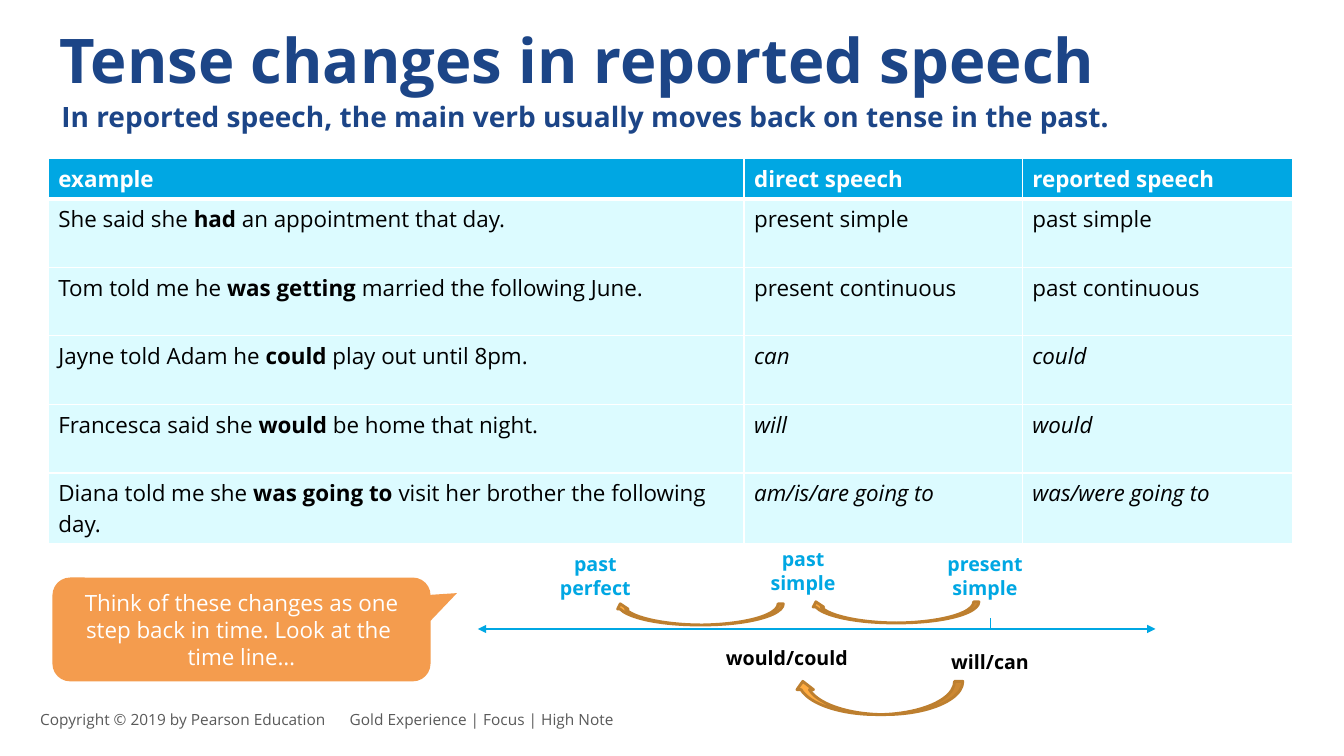
from lxml.etree import SubElement
from pptx import Presentation
from pptx.dml.color import RGBColor
from pptx.enum.shapes import MSO_CONNECTOR as Connector, MSO_SHAPE as Shape
from pptx.enum.text import MSO_ANCHOR as Anchor, MSO_AUTO_SIZE as AutoSize, PP_ALIGN as Align
from pptx.oxml.ns import qn
from pptx.util import Pt

PX = 9144
FONT = "Open Sans"
COLORS = {"navy": "1C4587", "blue": "00A7E3", "ice": "BAF8FF", "orange": "F49C4E",
          "amber": "FFAB40", "brown": "BD7F2F", "grey": "595959",
          "white": "FFFFFF", "black": "000000"}

TITLE = "Tense changes in reported speech"
SUBTITLE = "In reported speech, the main verb usually moves back on tense in the past."
HEADER = ["example", "direct speech", "reported speech"]
ROWS = [
    ("She said she **had** an appointment that day.", "present simple", "past simple"),
    ("Tom told me he **was getting** married the following June.",
     "present continuous", "past continuous"),
    ("Jayne told Adam he **could** play out until 8pm.", "can", "could"),
    ("Francesca said she **would** be home that night.", "will", "would"),
    ("Diana told me she **was going to** visit her brother the following day.",
     "am/is/are going to", "was/were going to"),
]
FIRST_ITALIC_ROW = 3
COLUMN_WIDTHS = [690, 276, 268]
HEADER_HEIGHT, ROW_HEIGHT = 38, 68
ADVICE = ["Think of these changes as one step back in time. Look at the ", "time line…"]
FOOTER = "Copyright © 2019 by Pearson Education\tGold Experience | Focus | High Note"
FOOTER_TAB = 307
TIMELINE_LABELS = [
    ("will/can", "black", (894, 640, 176, 34)),
    ("present simple", "blue", (928, 543, 98, 57)),
    ("past simple", "blue", (737, 538, 119, 57)),
    ("past perfect", "blue", (531, 543, 119, 57)),
    ("would/could", "black", (660, 636, 241, 34)),
]
TIMELINE = [((474, 624), (1146, 624), 1.75, True), ((982, 624), (982, 613), 0.75, False)]
STEP_ARROWS = [(788, 676, 167, 33), (804, 597, 167, 21), (610, 599, 167, 21)]


def emu(lengths):
    return [length * PX for length in lengths]


def rgb(name):
    return RGBColor.from_string(COLORS[name])


def apply(target, **values):
    for name, value in values.items():
        setattr(target, name, value)


def write(para, text, size, color, bold=False, italic=False, **layout):
    apply(para, **layout)
    for index, part in enumerate(text.split("**")):
        span = para.add_run()
        span.text = part
        apply(span.font, name=FONT, size=Pt(size), bold=bold or index % 2 == 1, italic=italic)
        span.font.color.rgb = rgb(color)


def place(shape, area):
    apply(shape, **dict(zip(("left", "top", "width", "height"), emu(area))))


def add_label(slide, area, text, size, color, bold=True, anchor=Anchor.TOP,
              fit=AutoSize.NONE, **layout):
    box = slide.shapes.add_textbox(*emu(area))
    apply(box.text_frame, word_wrap=True, vertical_anchor=anchor, auto_size=fit)
    write(box.text_frame.paragraphs[0], text, size, color, bold, **layout)
    return box


def add_filled(slide, kind, area, color):
    shape = slide.shapes.add_shape(kind, *emu(area))
    shape.shadow.inherit = False
    shape.fill.solid()
    shape.fill.fore_color.rgb = rgb(color)
    return shape


def style_cell(cell, color, bottom_width, alpha=None):
    props = cell._tc.get_or_add_tcPr()
    for side, width in (("lnL", 1), ("lnR", 1), ("lnT", 1), ("lnB", bottom_width)):
        border = SubElement(props, qn(f"a:{side}"), w=str(Pt(width)))
        SubElement(SubElement(border, qn("a:solidFill")), qn("a:srgbClr"), val=COLORS["white"])
    fill = SubElement(SubElement(props, qn("a:solidFill")), qn("a:srgbClr"), val=COLORS[color])
    if alpha:
        SubElement(fill, qn("a:alpha"), val=str(alpha * 1000))


def add_tense_table(slide):
    height = HEADER_HEIGHT + ROW_HEIGHT * len(ROWS)
    area = emu((48, 157, sum(COLUMN_WIDTHS), height))
    table = slide.shapes.add_table(len(ROWS) + 1, len(HEADER), *area).table
    for column, width in zip(table.columns, COLUMN_WIDTHS):
        column.width = width * PX
    for r, texts in enumerate([HEADER, *ROWS]):
        table.rows[r].height = (ROW_HEIGHT if r else HEADER_HEIGHT) * PX
        for c, text in enumerate(texts):
            cell = table.cell(r, c)
            para = cell.text_frame.paragraphs[0]
            if r:
                style_cell(cell, "ice", 1, 50)
                write(para, text, 16, "black", italic=c > 0 and r >= FIRST_ITALIC_ROW)
            else:
                style_cell(cell, "blue", 3)
                write(para, text, 16, "white", True)


def add_timeline(slide):
    for start, end, width, arrowed in TIMELINE:
        line = slide.shapes.add_connector(Connector.STRAIGHT, *emu(start + end))
        line.line.color.rgb = rgb("blue")
        line.line.width = Pt(width)
        if arrowed:
            outline = line.line._get_or_add_ln()
            for tip in ("headEnd", "tailEnd"):
                SubElement(outline, qn(f"a:{tip}"), type="triangle")
        SubElement(line._element.spPr, qn("a:effectLst"))
    for text, color, area in TIMELINE_LABELS:
        add_label(slide, area, text, 14, color, fit=AutoSize.SHAPE_TO_FIT_TEXT,
                  alignment=Align.CENTER)
    for area in STEP_ARROWS:
        arrow = add_filled(slide, Shape.CURVED_UP_ARROW, area, "amber")
        arrow.line.color.rgb = rgb("brown")
        arrow.line.width = Pt(2)
        arrow._element.spPr.xfrm.set("flipH", "1")


def add_advice(slide):
    callout = add_filled(slide, Shape.ROUNDED_RECTANGULAR_CALLOUT, (52, 573, 375, 103), "orange")
    callout.line.fill.background()
    for index, value in enumerate((0.57, -0.35, 0.17)):
        callout.adjustments[index] = value
    frame = callout.text_frame
    apply(frame, word_wrap=True, vertical_anchor=Anchor.MIDDLE)
    for index, text in enumerate(ADVICE):
        para = frame.add_paragraph() if index else frame.paragraphs[0]
        write(para, text, 16, "white", alignment=Align.CENTER)


def add_footer(slide):
    box = add_label(slide, (30, 694, 692, 40), FOOTER, 11, "grey", False, Anchor.MIDDLE)
    tabs = SubElement(box.text_frame.paragraphs[0]._p.get_or_add_pPr(), qn("a:tabLst"))
    SubElement(tabs, qn("a:tab"), pos=str(FOOTER_TAB * PX), algn="l")


def main():
    deck = Presentation()
    apply(deck, slide_width=1333 * PX, slide_height=750 * PX)
    page = deck.slides.add_slide(deck.slide_layouts[5])
    title = page.shapes.title
    place(title, (49, 25, 1203, 143))
    apply(title.text_frame, word_wrap=True, vertical_anchor=Anchor.TOP, auto_size=AutoSize.NONE)
    write(title.text_frame.paragraphs[0], TITLE, 44, "navy", True,
          alignment=Align.LEFT, line_spacing=0.9)
    add_label(page, (51, 98, 1095, 45), SUBTITLE, 20, "navy", line_spacing=0.9,
              space_after=Pt(21))
    add_tense_table(page)
    add_advice(page)
    add_timeline(page)
    add_footer(page)
    deck.save("out.pptx")


if __name__ == "__main__":
    main()
